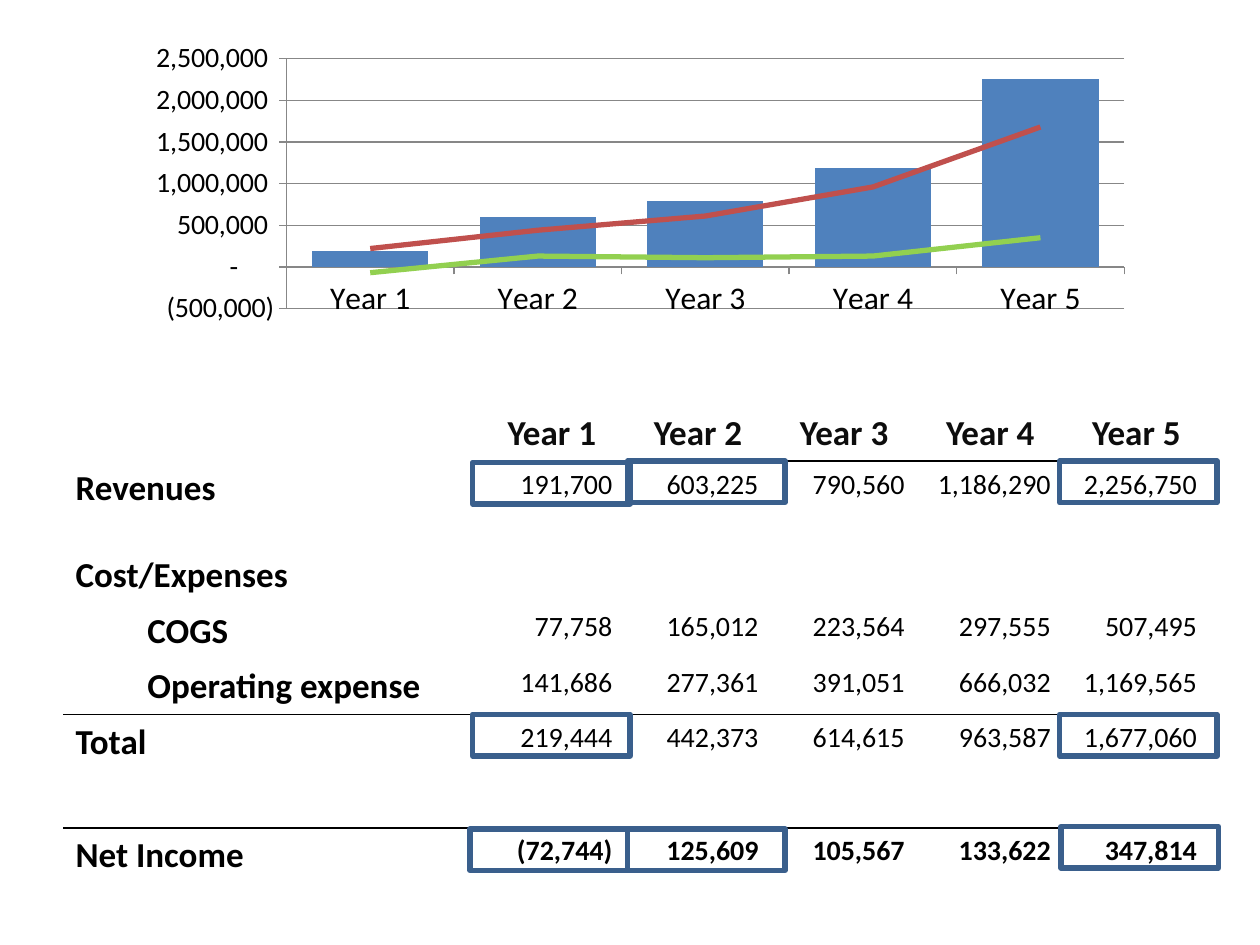
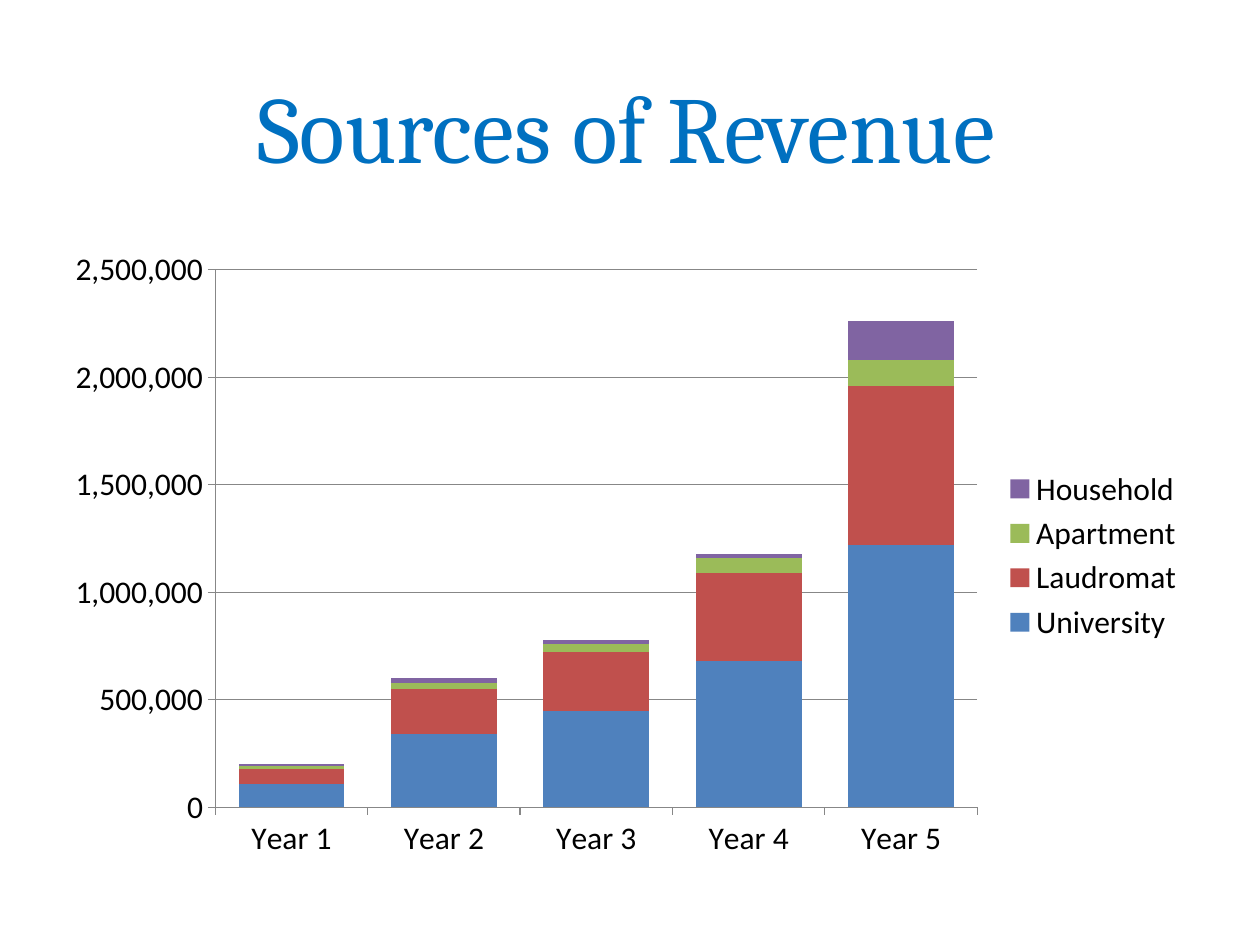
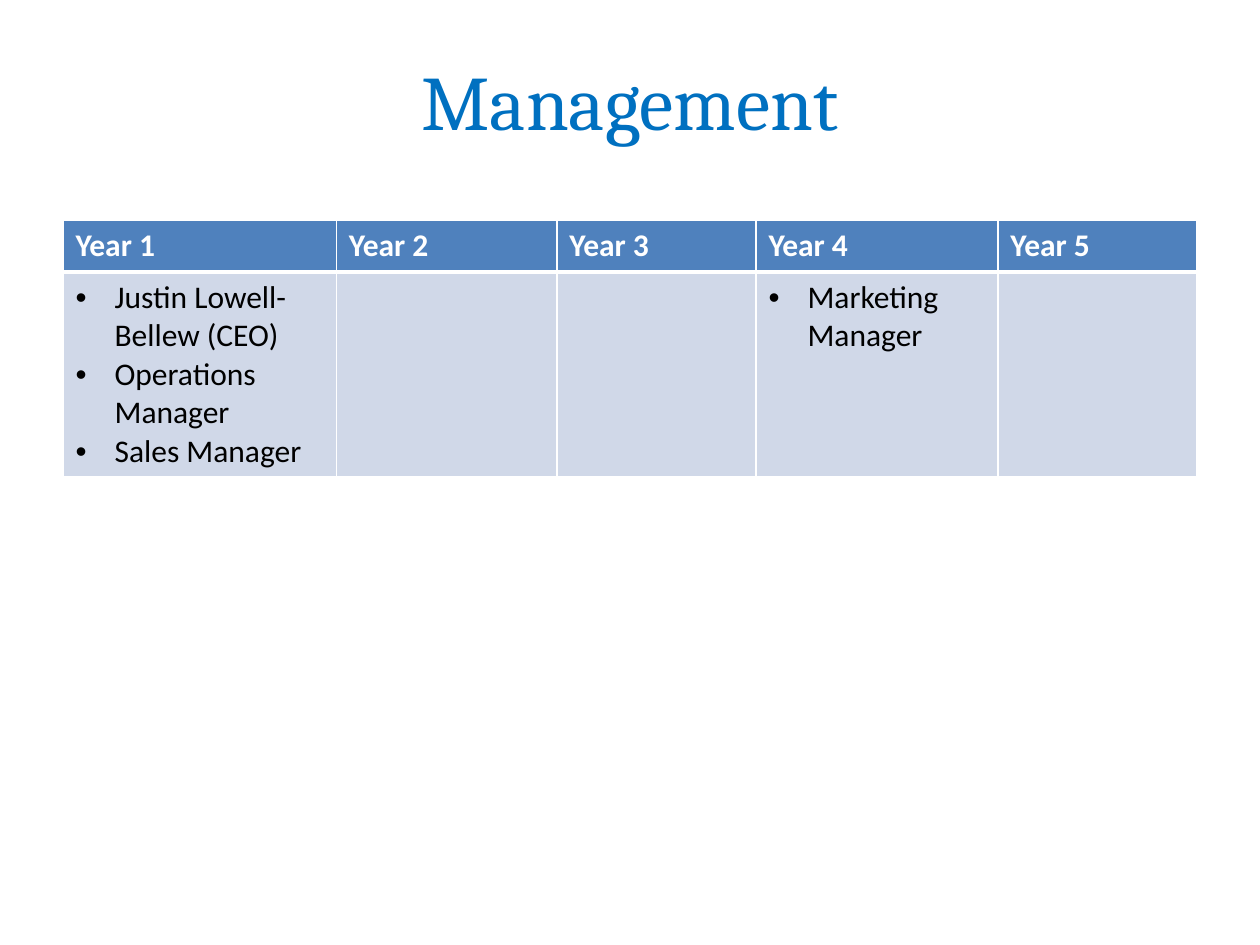
from lxml.etree import SubElement
from pptx import Presentation
from pptx.chart.data import CategoryChartData
from pptx.dml.color import RGBColor
from pptx.enum.chart import XL_CHART_TYPE as CT, XL_LEGEND_POSITION as LP, XL_MARKER_STYLE as MS
from pptx.enum.shapes import MSO_SHAPE
from pptx.enum.text import MSO_ANCHOR, MSO_AUTO_SIZE, PP_ALIGN
from pptx.oxml import parse_xml
from pptx.oxml.ns import nsdecls, qn
from pptx.util import Inches, Pt

COLORS = {
    "black": "000000", "heading": "0D0D0D", "white": "FFFFFF", "title": "0070C0",
    "blue": "4F81BD", "red": "C0504D", "green": "9BBB59", "purple": "8064A2",
    "lime": "92D050", "frame": "3A5F8C", "grid": "878787", "pale": "D0D8E8",
}
YEARS = [f"Year {n}" for n in range(1, 6)]
NO_STYLE = "{2D5ABB26-0587-4C30-8999-92F81FD0307C}"

RESULTS = [
    ("Series 1", "blue", [190000, 600000, 790000, 1190000, 2260000]),
    ("Series 2", "red", [220000, 440000, 610000, 960000, 1680000]),
    ("Series 3", "lime", [-70000, 130000, 110000, 130000, 350000]),
]
SOURCES = [
    ("University", "blue", [110000, 340000, 450000, 680000, 1220000]),
    ("Laudromat", "red", [70000, 210000, 270000, 410000, 740000]),
    ("Apartment", "green", [10000, 30000, 40000, 70000, 120000]),
    ("Household", "purple", [10000, 20000, 20000, 20000, 180000]),
]
REVENUE_ROWS = [
    ["", *YEARS],
    ["Revenues", "191,700", "603,225", "790,560", "1,186,290", "2,256,750"],
]
COST_ROWS = [
    ["Cost/Expenses", "", "", "", "", ""],
    ["COGS", "77,758", "165,012", "223,564", "297,555", "507,495"],
    ["Operating expense", "141,686", "277,361", "391,051", "666,032", "1,169,565"],
    ["Total", "219,444", "442,373", "614,615", "963,587", "1,677,060"],
]
INCOME_ROWS = [["Net Income", "(72,744)", "125,609", "105,567", "133,622", "347,814"]]
INDENTED = ("COGS", "Operating expense")
FINANCE_COLS = [3.3] + [1.16] * 5
FRAMES = [
    (3.75, 3.67), (4.98, 3.66), (8.41, 3.66), (3.75, 5.67),
    (8.41, 5.67), (3.73, 6.58), (4.98, 6.58), (8.42, 6.56),
]
STAFF = [
    ["Justin Lowell-Bellew (CEO)", "Operations Manager", "Sales Manager"],
    [], [], ["Marketing Manager"], [],
]
STAFF_COLS = [2.17, 1.75, 1.58, 1.92, 1.58]
ACCOUNTING = '_(* #,##0_);_(* \\(#,##0\\);_(* "-"??_);_(@_)'


def rgb(name):
    return RGBColor.from_string(COLORS[name])


def style(font, color="black", **values):
    for key, value in {"name": "Calibri", **values}.items():
        setattr(font, key, value)
    font.color.rgb = rgb(color)


def add_title(s, text, box, size):
    sp = s.shapes.title
    for key, value in zip(("left", "top", "width", "height"), box):
        setattr(sp, key, Inches(value))
    tf = sp.text_frame
    tf.auto_size, tf.vertical_anchor = MSO_AUTO_SIZE.NONE, MSO_ANCHOR.MIDDLE
    p = tf.paragraphs[0]
    p.alignment = PP_ALIGN.CENTER
    r = p.add_run()
    r.text = text
    style(r.font, "title", name="Cambria", size=Pt(size))


def add_table(s, left, top, cols, heights):
    shape = s.shapes.add_table(len(heights), len(cols), Inches(left), Inches(top),
                               Inches(sum(cols)), Inches(sum(heights)))
    table = shape.table
    table.first_row = table.horz_banding = False
    table._tbl.tblPr.find(qn("a:tableStyleId")).text = NO_STYLE
    for col, width in zip(table.columns, cols):
        col.width = Inches(width)
    for row, height in zip(table.rows, heights):
        row.height = Inches(height)
    return table


def set_borders(cell, color, **widths):
    tcPr = cell._tc.get_or_add_tcPr()
    for side in "LRTB":
        if side in widths:
            ln = SubElement(tcPr, qn(f"a:ln{side}"), w=str(Pt(widths[side])))
            fill = SubElement(ln, qn("a:solidFill"))
            SubElement(fill, qn("a:srgbClr"), val=COLORS[color])


def add_finance_table(s, top, rows, ruled, bold=False):
    table = add_table(s, 0.5, top, FINANCE_COLS, [0.43] * len(rows))
    for i, row in enumerate(rows):
        for j, text in enumerate(row):
            cell = table.cell(i, j)
            set_borders(cell, "black", **ruled(i, j))
            cell.fill.background()
            p = cell.text_frame.paragraphs[0]
            if text in INDENTED:
                p._p.get_or_add_pPr().set("marL", str(Inches(0.57)))
            if j:
                p.alignment = PP_ALIGN.CENTER if text in YEARS else PP_ALIGN.RIGHT
            if text:
                r = p.add_run()
                r.text = text
                large = j == 0 or text in YEARS
                style(r.font, "heading" if text in YEARS else "black",
                      size=Pt(20 if large else 16), bold=large or bold)


def add_chart(s, kind, box, data, plot_area, low, fmt, value_size):
    cd = CategoryChartData()
    cd.categories = YEARS
    for name, _, values in data:
        cd.add_series(name, values)
    chart = s.shapes.add_chart(kind, *map(Inches, box), cd).chart
    chart.has_title = chart.has_legend = False
    style(chart.font, size=Pt(18))
    plot = chart.plots[0]
    plot.gap_width, plot.vary_by_categories = 44, False
    for ser, (_, color, _) in zip(plot.series, data):
        ser.format.fill.solid()
        ser.format.fill.fore_color.rgb = rgb(color)
    axis = chart.value_axis
    for key, value in {"minimum_scale": low, "maximum_scale": 2500000,
                       "major_unit": 500000, "has_major_gridlines": True}.items():
        setattr(axis, key, value)
    axis.tick_labels.number_format = fmt
    axis.tick_labels.number_format_is_linked = False
    style(axis.tick_labels.font, size=Pt(value_size))
    for part in (axis, axis.major_gridlines, chart.category_axis):
        part.format.line.width = Pt(0.75)
        part.format.line.color.rgb = rgb("grid")
    set_plot_area(chart, plot_area)
    return chart


def set_plot_area(chart, plot_area):
    area = chart._chartSpace.chart.plotArea
    for old in area.findall(qn("c:layout")):
        area.remove(old)
    layout = parse_xml(f'<c:layout {nsdecls("c")}><c:manualLayout/></c:layout>')
    entries = [("layoutTarget", "inner"), ("xMode", "edge"), ("yMode", "edge"),
               *zip("xywh", plot_area)]
    for tag, value in entries:
        SubElement(layout[0], qn(f"c:{tag}"), val=str(value))
    area.insert(0, layout)


def turn_into_lines(chart, data):
    bars = chart._chartSpace.chart.plotArea.find(qn("c:barChart"))
    lines = parse_xml(f'<c:lineChart {nsdecls("c")}><c:grouping val="standard"/>'
                      '<c:varyColors val="0"/></c:lineChart>')
    for ser in bars.findall(qn("c:ser"))[1:]:
        for tag in ("c:invertIfNegative", "c:spPr"):
            for old in ser.findall(qn(tag)):
                ser.remove(old)
        lines.append(ser)
    SubElement(lines, qn("c:marker"), val="1")
    for ax in bars.findall(qn("c:axId")):
        SubElement(lines, qn("c:axId"), val=ax.get("val"))
    bars.addnext(lines)
    for ser, (_, color, _) in zip(chart.plots[1].series, data[1:]):
        ser.smooth = False
        ser.marker.style = MS.NONE
        ser.format.line.width = Pt(3)
        ser.format.line.color.rgb = rgb(color)


def build_financials(prs):
    s = prs.slides.add_slide(prs.slide_layouts[6])
    chart = add_chart(s, CT.COLUMN_CLUSTERED, (0.83, 0.25, 8.25, 2.67), RESULTS,
                      (0.175, 0.081, 0.806, 0.743), -500000, ACCOUNTING, 16)
    turn_into_lines(chart, RESULTS)
    add_finance_table(s, 3.22, REVENUE_ROWS,
                      lambda i, j: {"B" if i == 0 else "T": 1} if j else {})
    add_finance_table(s, 4.35, COST_ROWS, lambda i, j: {2: {"B": 1}, 3: {"T": 1}}.get(i, {}))
    add_finance_table(s, 6.57, INCOME_ROWS, lambda i, j: {"T": 1}, bold=True)
    for left, top in FRAMES:
        sp = s.shapes.add_shape(MSO_SHAPE.RECTANGLE, Inches(left), Inches(top),
                                Inches(1.25), Inches(0.33))
        sp.shadow.inherit = False
        sp.fill.background()
        sp.line.width = Pt(3)
        sp.line.color.rgb = rgb("frame")


def build_sources(prs):
    s = prs.slides.add_slide(prs.slide_layouts[5])
    add_title(s, "Sources of Revenue", (-0.03, 0.5, 10, 1), 54)
    chart = add_chart(s, CT.COLUMN_STACKED, (0.42, 1.9, 9.08, 5.02), SOURCES,
                      (0.142, 0.048, 0.666, 0.85), 0, "#,##0", 18)
    chart.plots[0].overlap = 100
    chart.has_legend = True
    chart.legend.position = LP.RIGHT
    chart.legend.include_in_layout = False
    style(chart.legend.font, size=Pt(18))


def build_management(prs):
    s = prs.slides.add_slide(prs.slide_layouts[5])
    add_title(s, "Management", (0, 0.17, 10, 1.25), 44)
    table = add_table(s, 0.5, 1.75, STAFF_COLS, [0.41, 1.6])
    for j, (year, people) in enumerate(zip(YEARS, STAFF)):
        for i, (lines, fill) in enumerate((([year], "blue"), (people, "pale"))):
            cell = table.cell(i, j)
            set_borders(cell, "white", L=1, R=1, T=1 if i == 0 else 3, B=3 if i == 0 else 1)
            cell.fill.solid()
            cell.fill.fore_color.rgb = rgb(fill)
            tf = cell.text_frame
            for n, text in enumerate(lines):
                p = tf.add_paragraph() if n else tf.paragraphs[0]
                if i:
                    pPr = p._p.get_or_add_pPr()
                    pPr.set("marL", str(Inches(0.31)))
                    pPr.set("indent", str(-Inches(0.31)))
                    SubElement(pPr, qn("a:buFont"), typeface="Arial")
                    SubElement(pPr, qn("a:buChar"), char="•")
                r = p.add_run()
                r.text = text
                style(r.font, "black" if i else "white", size=Pt(18), bold=i == 0)


def main():
    prs = Presentation()
    prs.slide_width, prs.slide_height = Inches(10), Inches(7.5)
    build_financials(prs)
    build_sources(prs)
    build_management(prs)
    prs.save("out.pptx")


if __name__ == "__main__":
    main()
